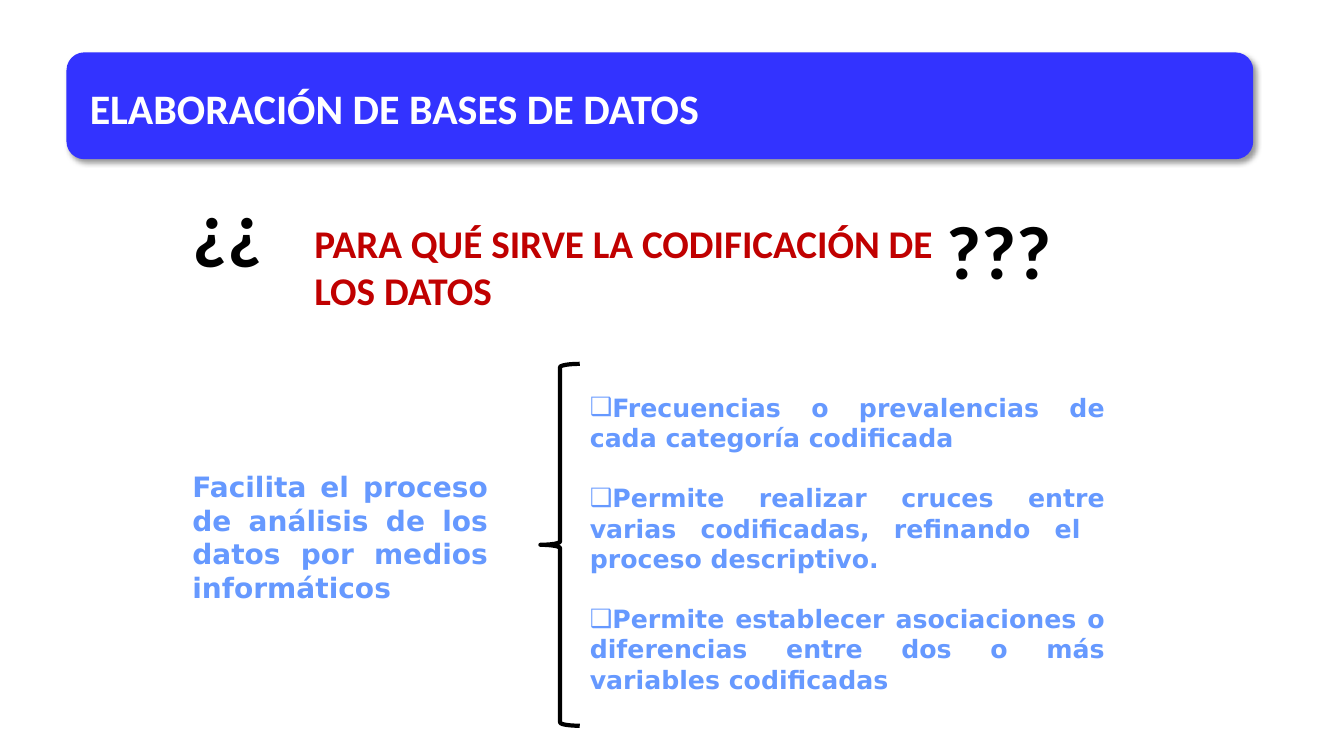
from lxml.etree import SubElement
from pptx import Presentation
from pptx.dml.color import RGBColor
from pptx.enum.shapes import MSO_SHAPE
from pptx.enum.text import MSO_ANCHOR, MSO_AUTO_SIZE, PP_ALIGN
from pptx.oxml import parse_xml
from pptx.oxml.ns import nsdecls, qn
from pptx.util import Inches, Pt

COLORS = {"banner": "3333FF", "title": "FFFFFF", "question": "C00000",
          "ink": "000000", "body": "6699FF"}
HEADING_FONT = "Calibri"
BODY_FONT = "DejaVu Sans"
BENEFITS = [
    "Frecuencias o prevalencias de cada categoría codificada",
    "Permite realizar cruces entre varias codificadas, refinando el  proceso descriptivo.",
    "Permite establecer asociaciones o diferencias entre dos o más variables codificadas",
]


def color(name):
    return RGBColor.from_string(COLORS[name])


def place(shape, left, top, width, height):
    shape.left, shape.top = Inches(left), Inches(top)
    shape.width, shape.height = Inches(width), Inches(height)


def prepare_frame(shape, wrap=True, anchor=MSO_ANCHOR.TOP):
    frame = shape.text_frame
    frame.auto_size = MSO_AUTO_SIZE.NONE
    frame.word_wrap = wrap
    frame.vertical_anchor = anchor
    return frame


def write(para, text, size, shade, font, align=PP_ALIGN.LEFT):
    para.alignment = align
    span = para.add_run()
    span.text = text
    span.font.name = font
    span.font.size = Pt(size)
    span.font.bold = True
    span.font.color.rgb = color(shade)


def add_text(page, box, text, size, shade, font, align=PP_ALIGN.LEFT, wrap=True):
    label = page.shapes.add_textbox(*map(Inches, box))
    frame = prepare_frame(label, wrap)
    write(frame.paragraphs[0], text, size, shade, font, align)


def add_shadow(shape):
    shape.shadow.inherit = False
    effects = shape.element.spPr.find(qn("a:effectLst"))
    effects.append(parse_xml(
        f'<a:outerShdw {nsdecls("a")} blurRad="{Pt(4)}" dist="{Pt(3)}" '
        f'dir="2700000" algn="tl" rotWithShape="0"><a:srgbClr val="{COLORS["ink"]}">'
        '<a:alpha val="40000"/></a:srgbClr></a:outerShdw>'))


def add_bullet(para, char):
    props = para._p.get_or_add_pPr()
    props.set("marL", "0")
    props.set("indent", str(Inches(-0.29)))
    SubElement(props, qn("a:buFont")).set("typeface", BODY_FONT)
    SubElement(props, qn("a:buChar")).set("char", char)


def build_header(page, left, top, width, height):
    # Rounded banner, kept behind the title
    banner = page.shapes.add_shape(MSO_SHAPE.ROUNDED_RECTANGLE,
                                   *map(Inches, (left, top, width, height)))
    banner.fill.solid()
    banner.fill.fore_color.rgb = color("banner")
    banner.line.fill.background()
    add_shadow(banner)
    title = page.shapes.title
    title.element.addprevious(banner.element)
    place(title, left + 0.13, top + 0.24, width - 0.79, 0.61)
    frame = prepare_frame(title, anchor=MSO_ANCHOR.MIDDLE)
    write(frame.paragraphs[0], "ELABORACIÓN DE BASES DE DATOS", 30, "title", HEADING_FONT)


def build_question(page, left, top):
    add_text(page, (left + 1.33, top + 0.39, 6.56, 1.04),
             "PARA QUÉ SIRVE LA CODIFICACIÓN DE LOS DATOS", 28, "question", HEADING_FONT)
    # Large question marks on both sides
    marks = [("¿¿", 0, 0, 1.13), ("???", 7.42, 0.23, 1.59)]
    for text, across, down, width in marks:
        add_text(page, (left + across, top + down, width, 1.01), text, 54, "ink",
                 HEADING_FONT, PP_ALIGN.CENTER, wrap=False)


def build_benefits(page, left, top, height):
    # Main statement
    add_text(page, (left, top + 1, 3.13, 1.45),
             "Facilita el proceso de análisis de los datos por medios informáticos",
             20, "body", BODY_FONT, PP_ALIGN.JUSTIFY)
    # Brace between statement and list
    brace = page.shapes.add_shape(MSO_SHAPE.LEFT_BRACE,
                                  *map(Inches, (left + 3.55, top, 0.39, height)))
    brace.shadow.inherit = False
    brace.fill.background()
    brace.line.color.rgb = color("ink")
    brace.line.width = Pt(3)
    # Bulleted list
    body = page.placeholders[1]
    place(body, left + 3.94, top + 0.23, 5.31, 3.13)
    frame = prepare_frame(body)
    for index, benefit in enumerate(BENEFITS):
        para = frame.add_paragraph() if index else frame.paragraphs[0]
        add_bullet(para, "❑")
        para.space_before = Pt(21.5 if index else 0)
        write(para, benefit, 18, "body", BODY_FONT, PP_ALIGN.JUSTIFY)


def main():
    deck = Presentation()
    deck.slide_width, deck.slide_height = Inches(13.33), Inches(7.5)
    page = deck.slides.add_slide(deck.slide_layouts[1])
    build_header(page, 0.66, 0.52, 11.77, 1.06)
    build_question(page, 1.69, 1.74)
    build_benefits(page, 1.81, 3.61, 3.59)
    deck.save("out.pptx")


if __name__ == "__main__":
    main()
